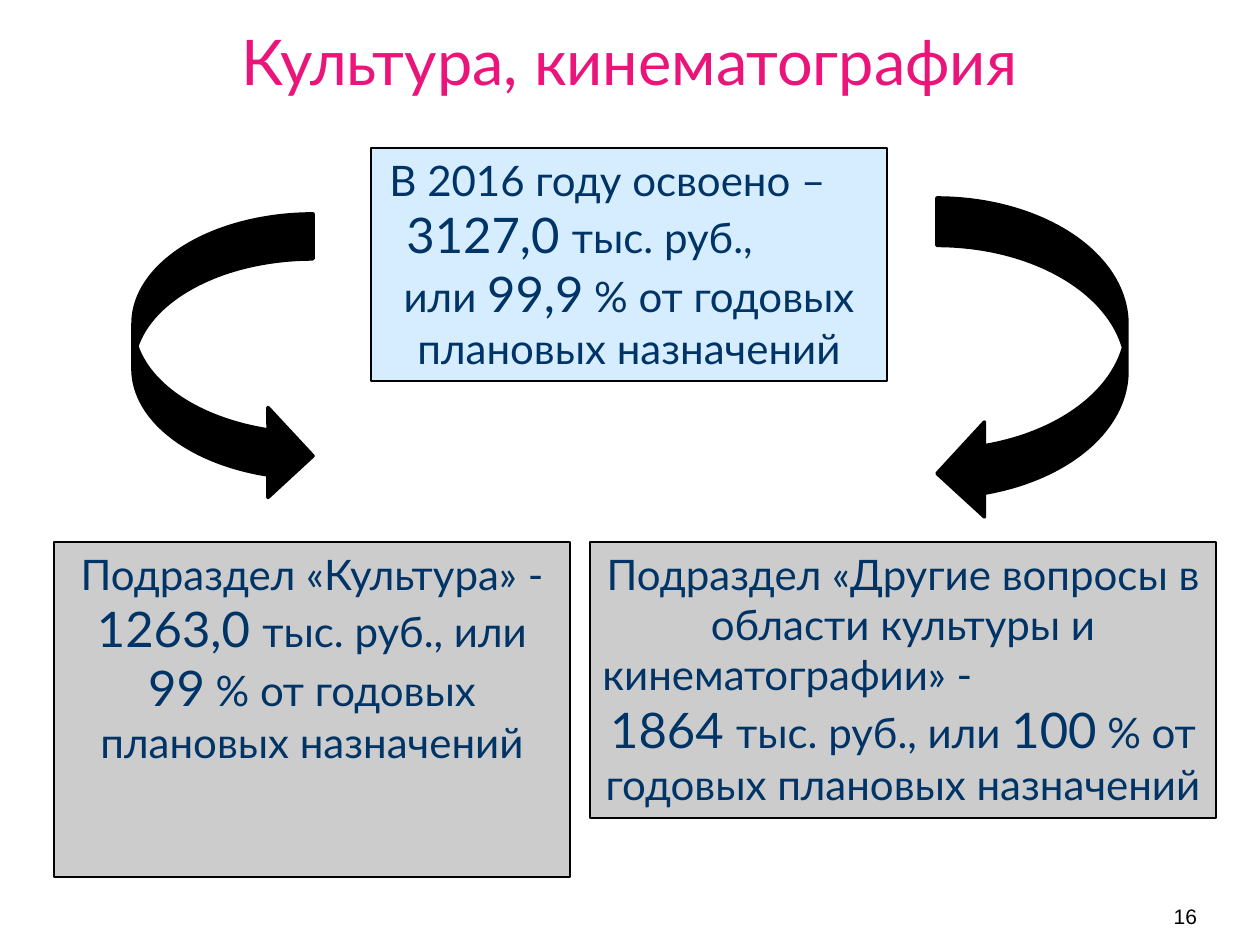
from pptx import Presentation
from pptx.dml.color import RGBColor
from pptx.enum.shapes import MSO_SHAPE as Shape
from pptx.enum.text import MSO_ANCHOR as Anchor, PP_ALIGN as Align
from pptx.util import Emu, Pt

SCALE = 914400 / 126
BLACK = RGBColor(0x00, 0x00, 0x00)
PINK = RGBColor(0xEA, 0x15, 0x7A)
NAVY = RGBColor(0x00, 0x33, 0x66)
GRAY = RGBColor(0xCC, 0xCC, 0xCC)
SKY = RGBColor(0xD6, 0xEC, 0xFF)
TITLE = {"name": "Lato", "size": Pt(36), "color": PINK}
BODY = {"name": "Lato", "size": Pt(24), "color": NAVY}
FIGURE = {**BODY, "size": Pt(28)}
NUMBER = {"name": "Arial", "size": Pt(12), "color": BLACK}


def px(length):
    return Emu(round(length * SCALE))


class SlideBuilder:
    """Draws styled elements on the current slide."""

    def __init__(self, slide):
        self.slide = slide

    def add_text(self, paragraph, text, style):
        run = paragraph.add_run()
        run.text = text
        for name, value in style.items():
            if name == "color":
                run.font.color.rgb = value
            else:
                setattr(run.font, name, value)

    def label(self, box, text, style, align, **frame_format):
        text_box = self.slide.shapes.add_textbox(*map(px, box))
        frame = text_box.text_frame
        for name, value in {"word_wrap": True, **frame_format}.items():
            setattr(frame, name, value)
        paragraph = frame.paragraphs[0]
        paragraph.alignment = align
        self.add_text(paragraph, text, style)

    def shape(self, kind, box, fill, line_width):
        shape = self.slide.shapes.add_shape(kind, *map(px, box))
        shape.shadow.inherit = False
        shape.fill.solid()
        shape.fill.fore_color.rgb = fill
        shape.line.color.rgb = BLACK
        shape.line.width = Pt(line_width)
        return shape

    def panel(self, box, fill, lines):
        frame = self.shape(Shape.RECTANGLE, box, fill, 0.75).text_frame
        frame.word_wrap = True
        frame.vertical_anchor = Anchor.TOP
        for index, (indent, runs) in enumerate(lines):
            paragraph = frame.add_paragraph() if index else frame.paragraphs[0]
            paragraph.alignment = Align.CENTER if indent is None else Align.LEFT
            if indent:
                paragraph._p.get_or_add_pPr().set("marL", str(px(indent)))
            for text, style in runs:
                self.add_text(paragraph, text, style)


def main():
    presentation = Presentation()
    presentation.slide_width = px(1260)
    presentation.slide_height = px(945)
    builder = SlideBuilder(presentation.slides.add_slide(presentation.slide_layouts[6]))

    builder.label((1092, 885, 105, 50), "16", NUMBER, Align.RIGHT,
                  margin_left=0, margin_right=0, vertical_anchor=Anchor.BOTTOM)
    builder.label((44, 16, 1171, 88), "Культура, кинематография", TITLE, Align.CENTER)

    plan = " % от годовых плановых назначений"
    builder.panel((54, 542, 516, 335), GRAY, [
        (None, [("Подраздел «Культура» -", BODY)]),
        (None, [("1263,0 ", FIGURE), ("тыс. руб., или", BODY)]),
        (None, [("99", FIGURE), (plan, BODY)]),
    ])
    builder.panel((590, 542, 626, 276), GRAY, [
        (None, [("Подраздел «Другие вопросы в области культуры и", BODY)]),
        (0, [("кинематографии» -", BODY)]),
        (None, [("1864 ", FIGURE), ("тыс. руб., или ", BODY), ("100", FIGURE), (plan, BODY)]),
    ])
    builder.panel((371, 148, 516, 233), SKY, [
        (6, [("В 2016 году освоено –", BODY)]),
        (23, [("3127,0 ", FIGURE), ("тыс. руб.,", BODY)]),
        (None, [("или ", BODY), ("99,9", FIGURE), (plan, BODY)]),
    ])

    builder.shape(Shape.CURVED_RIGHT_ARROW, (133, 214, 180, 287), BLACK, 2)
    builder.shape(Shape.CURVED_LEFT_ARROW, (937, 198, 190, 323), BLACK, 2)
    presentation.save("out.pptx")


if __name__ == "__main__":
    main()
